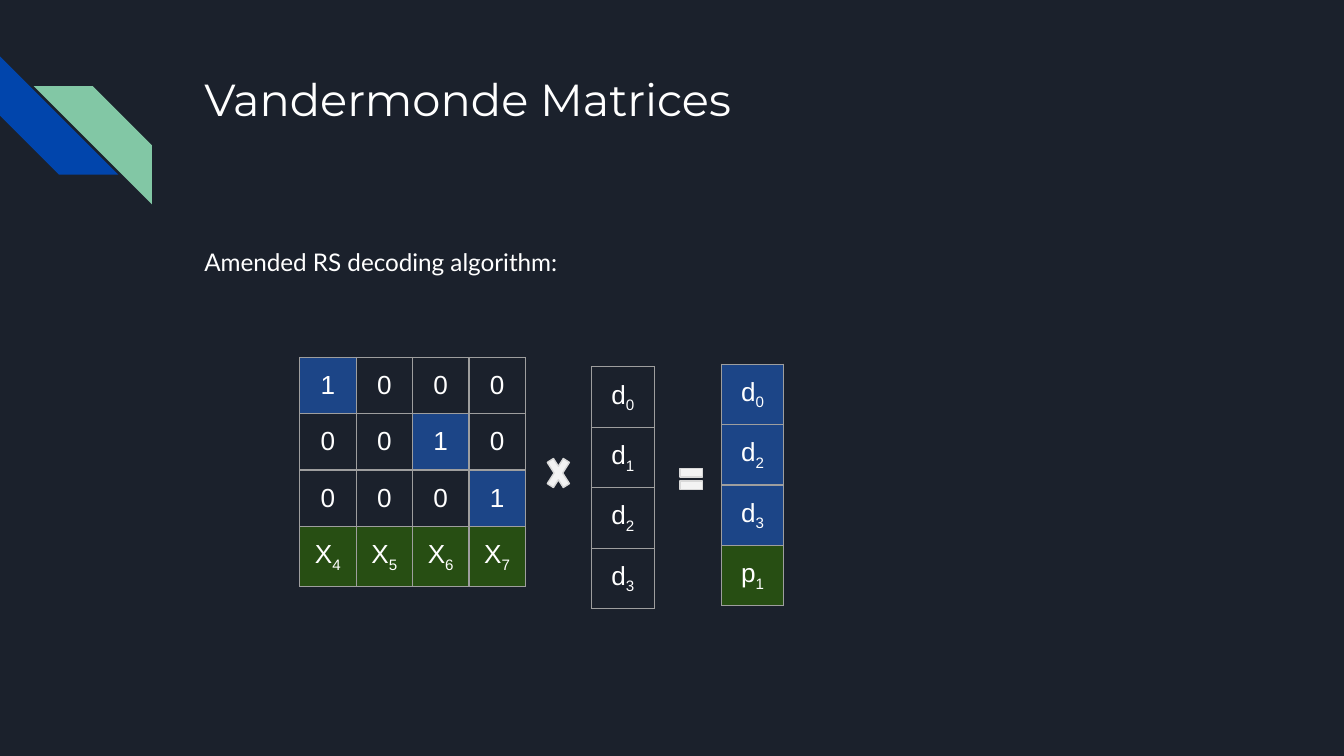
from lxml.etree import SubElement
from pptx import Presentation
from pptx.dml.color import RGBColor
from pptx.enum.shapes import MSO_SHAPE as Shape
from pptx.enum.text import MSO_ANCHOR as Anchor, MSO_AUTO_SIZE as AutoSize, PP_ALIGN as Align
from pptx.oxml.ns import qn
from pptx.util import Inches, Pt

GRID = 0.1
WHITE, BLUE, GREEN = "FFFFFF", "1C4587", "274E13"
BORDER = "9E9E9E"


def color(hex_code):
    """Turn a hex string into a colour."""
    return RGBColor.from_string(hex_code)


def grid(*steps):
    """Turn counts of grid columns and rows into lengths."""
    return [Inches(step * GRID) for step in steps]


def style(paragraph, font_name, size, align):
    """Set the white font and the alignment of a paragraph."""
    paragraph.alignment = align
    paragraph.font.name = font_name
    paragraph.font.size = Pt(size)
    paragraph.font.bold = False
    paragraph.font.color.rgb = color(WHITE)


def fill_placeholder(placeholder, box, text, font_name, size):
    """Move a placeholder, write its text and return the paragraph."""
    placeholder.left, placeholder.top, placeholder.width, placeholder.height = grid(*box)
    frame = placeholder.text_frame
    frame.text = text
    frame.word_wrap = True
    frame.auto_size = AutoSize.NONE
    frame.vertical_anchor = Anchor.TOP
    frame.margin_left = frame.margin_right = frame.margin_top = frame.margin_bottom = Inches(0.1)
    style(frame.paragraphs[0], font_name, size, Align.LEFT)
    return frame.paragraphs[0]


def remove_bullet(paragraph):
    """Take the bullet and the hanging indent off a paragraph."""
    properties = paragraph._p.get_or_add_pPr()
    properties.set("marL", "0")
    properties.set("indent", "0")
    properties.insert_element_before(
        properties.makeelement(qn("a:buNone")), "a:tabLst", "a:defRPr", "a:extLst")


def add_symbol(slide, kind, box, fill, outline=None, rotation=0, adjustments=()):
    """Add a flat preset shape, with a thin outline if one is given."""
    symbol = slide.shapes.add_shape(kind, *grid(*box))
    symbol.shadow.inherit = False
    symbol.rotation = rotation
    symbol.fill.solid()
    symbol.fill.fore_color.rgb = color(fill)
    if outline:
        symbol.line.color.rgb = color(outline)
        symbol.line.width = Pt(0.75)
    else:
        symbol.line.fill.background()
    for index, value in enumerate(adjustments):
        symbol.adjustments[index] = value


def add_borders(cell):
    """Draw the four borders of a cell."""
    properties = cell._tc.get_or_add_tcPr()
    for side in ("a:lnL", "a:lnR", "a:lnT", "a:lnB"):
        line = SubElement(properties, qn(side), w=str(Pt(0.75)))
        SubElement(SubElement(line, qn("a:solidFill")), qn("a:srgbClr"), val=BORDER)


def write_entry(cell, entry, fill):
    """Write a matrix entry, its second character as a subscript."""
    add_borders(cell)
    if fill:
        cell.fill.solid()
        cell.fill.fore_color.rgb = color(fill)
    else:
        cell.fill.background()
    cell.margin_left = cell.margin_right = cell.margin_top = cell.margin_bottom = Inches(0.1)
    paragraph = cell.text_frame.paragraphs[0]
    style(paragraph, "Arial", 14, Align.CENTER)
    paragraph.add_run().text = entry[0]
    if entry[1:]:
        subscript = paragraph.add_run()
        subscript.text = entry[1:]
        subscript._r.get_or_add_rPr().set("baseline", "-25000")


def add_matrix(slide, left, top, column_width, row_height, rows, fill_of):
    """Add a matrix whose cell fills follow from their entries."""
    columns = len(rows[0])
    box = grid(left, top, column_width * columns, row_height * len(rows))
    table = slide.shapes.add_table(len(rows), columns, *box).table
    table.first_row = table.horz_banding = False
    for row_index, row in enumerate(rows):
        for column_index, entry in enumerate(row):
            write_entry(table.cell(row_index, column_index), entry, fill_of(entry))


def main():
    """Build the slide and save it."""
    deck = Presentation()
    deck.slide_width, deck.slide_height = grid(100, 56.25)
    slide = deck.slides.add_slide(deck.slide_layouts[1])
    slide.background.fill.solid()
    slide.background.fill.fore_color.rgb = color("1B212C")

    add_symbol(slide, Shape.DIAGONAL_STRIPE, (0, 4.2, 8.8, 8.8), "0145AC", rotation=270)
    add_symbol(slide, Shape.DIAGONAL_STRIPE, (2.5, 6.4, 8.8, 8.8), "82C7A5", rotation=90)

    title, body = slide.placeholders
    fill_placeholder(title, (14.2, 4.3, 77, 10), "Vandermonde Matrices", "Montserrat", 24)
    intro = fill_placeholder(
        body, (14.2, 17.1, 77, 5), "Amended RS decoding algorithm:", "Lato", 13)
    intro.line_spacing = 1.15
    intro.space_before = Pt(0)
    intro.space_after = Pt(16)
    remove_bullet(intro)

    decoding_rows = ["1000", "0010", "0001", ["X4", "X5", "X6", "X7"]]
    data_rows = [["d0"], ["d1"], ["d2"], ["d3"]]
    result_rows = [["d0"], ["d2"], ["d3"], ["p1"]]
    result_fills = {"1": BLUE, "d": BLUE, "X": GREEN, "p": GREEN}

    add_matrix(slide, 22.3, 26.6, 4.2, 4.18, decoding_rows, lambda entry: result_fills.get(entry[0]))
    add_matrix(slide, 44, 27.3, 4.7, 4.48, data_rows, lambda entry: None)
    add_matrix(slide, 53.7, 27.1, 4.6, 4.48, result_rows, lambda entry: result_fills[entry[0]])

    add_symbol(slide, Shape.MATH_MULTIPLY, (40.4, 33.4, 2.3, 3.6), "F3F3F3", "D9D9D9",
               adjustments=(0.235,))
    add_symbol(slide, Shape.MATH_EQUAL, (50.3, 34.3, 2.3, 2.7), "F3F3F3", "D9D9D9",
               adjustments=(0.235, 0.118))

    deck.save("out.pptx")


if __name__ == "__main__":
    main()
